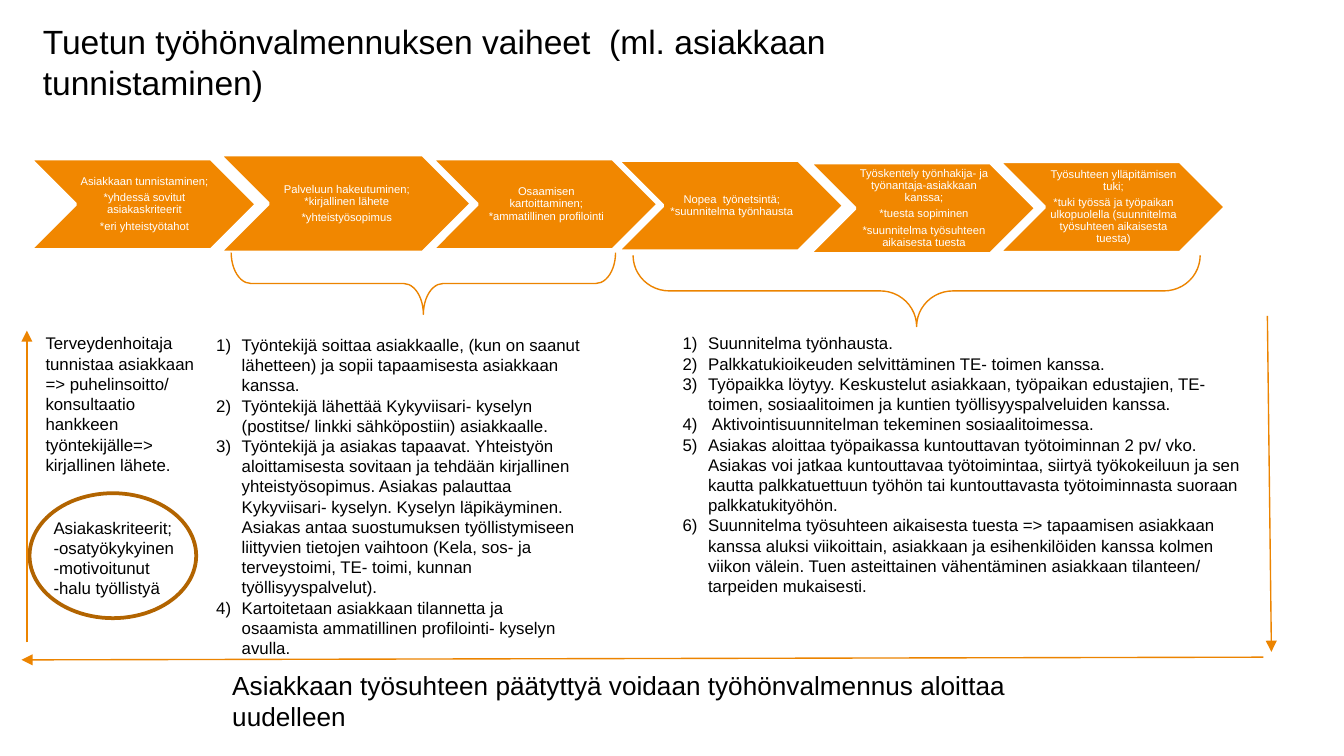
import pptx
import pptx.util
import pptx.dml.color
import pptx.enum.shapes
import pptx.enum.text
import pptx.oxml.ns
from lxml import etree

Inches, Pt = pptx.util.Inches, pptx.util.Pt
SHAPE = pptx.enum.shapes.MSO_SHAPE
TEXT = pptx.enum.text
qn = pptx.oxml.ns.qn

COLORS = {
    "phase": "F18700",
    "line": "EC8400",
    "ring": "B26400",
    "light": "FFFFFF",
    "text": "000000",
}

PHASES = [
    (0.22, 1.18, 1.69, 0.68, [
        "Asiakkaan tunnistaminen;",
        "*yhdessä sovitut asiakaskriteerit",
        "*eri yhteistyötahot"]),
    (1.63, 1.15, 1.88, 0.73, [
        "Palveluun hakeutuminen; *kirjallinen lähete",
        "*yhteistyösopimus"]),
    (3.21, 1.18, 1.69, 0.68, [
        "Osaamisen kartoittaminen; *ammatillinen profilointi"]),
    (4.59, 1.19, 1.69, 0.68, [
        "Nopea  työnetsintä; *suunnitelma työnhausta"]),
    (6.02, 1.21, 1.69, 0.68, [
        "Työskentely työnhakija- ja työnantaja-asiakkaan kanssa;",
        "*tuesta sopiminen",
        "*suunnitelma työsuhteen aikaisesta tuesta"]),
    (7.43, 1.2, 1.69, 0.68, [
        "Työsuhteen ylläpitämisen tuki;",
        "*tuki työssä ja työpaikan ulkopuolella (suunnitelma työsuhteen aikaisesta tuesta)"]),
]

REFERRAL = ["Terveydenhoitaja tunnistaa asiakkaan => puhelinsoitto/ konsultaatio "
            "hankkeen työntekijälle=> kirjallinen lähete."]

CRITERIA = ["Asiakaskriteerit;", "-osatyökykyinen", "-motivoitunut", "-halu työllistyä"]

INTAKE_STEPS = [
    "Työntekijä soittaa asiakkaalle, (kun on saanut lähetteen) ja sopii "
    "tapaamisesta asiakkaan kanssa.",
    "Työntekijä lähettää Kykyviisari- kyselyn (postitse/ linkki sähköpostiin) asiakkaalle.",
    "Työntekijä ja asiakas tapaavat. Yhteistyön aloittamisesta sovitaan ja tehdään "
    "kirjallinen yhteistyösopimus. Asiakas palauttaa Kykyviisari- kyselyn. Kyselyn "
    "läpikäyminen. Asiakas antaa suostumuksen työllistymiseen liittyvien tietojen "
    "vaihtoon (Kela, sos- ja terveystoimi, TE- toimi, kunnan työllisyyspalvelut).",
    "Kartoitetaan asiakkaan tilannetta ja osaamista ammatillinen profilointi- kyselyn avulla.",
]

WORK_STEPS = [
    "Suunnitelma työnhausta.",
    "Palkkatukioikeuden selvittäminen TE- toimen kanssa.",
    "Työpaikka löytyy. Keskustelut asiakkaan, työpaikan edustajien, TE- toimen, "
    "sosiaalitoimen ja kuntien työllisyyspalveluiden kanssa.",
    " Aktivointisuunnitelman tekeminen sosiaalitoimessa.",
    "Asiakas aloittaa työpaikassa kuntouttavan työtoiminnan 2 pv/ vko.  Asiakas voi "
    "jatkaa kuntouttavaa työtoimintaa, siirtyä työkokeiluun ja sen kautta "
    "palkkatuettuun työhön tai kuntouttavasta työtoiminnasta suoraan palkkatukityöhön.",
    "Suunnitelma työsuhteen aikaisesta tuesta => tapaamisen asiakkaan kanssa aluksi "
    "viikoittain, asiakkaan ja esihenkilöiden kanssa kolmen viikon välein. Tuen "
    "asteittainen vähentäminen asiakkaan tilanteen/ tarpeiden mukaisesti.",
]


def rgb(name):
    return pptx.dml.color.RGBColor.from_string(COLORS[name])


def number(p, indent=0.19):
    pPr = p._p.get_or_add_pPr()
    pPr.set("marL", str(Inches(indent)))
    pPr.set("indent", str(-Inches(indent)))
    etree.SubElement(pPr, qn("a:buFont"), typeface="+mj-lt")
    etree.SubElement(pPr, qn("a:buAutoNum"), type="arabicParenR")


def add_text(s, x, y, w, h, texts, size=9, color="text", align=None, anchor=None,
             insets=None, spacing=None, after=None, numbered=False):
    tf = s.shapes.add_textbox(Inches(x), Inches(y), Inches(w), Inches(h)).text_frame
    tf.word_wrap = True
    tf.vertical_anchor = anchor
    if insets:
        tf.margin_left, tf.margin_top, tf.margin_right, tf.margin_bottom = map(Inches, insets)
    else:
        tf.auto_size = TEXT.MSO_AUTO_SIZE.SHAPE_TO_FIT_TEXT
    for i, text in enumerate(texts):
        p = tf.add_paragraph() if i else tf.paragraphs[0]
        p.alignment = align
        p.line_spacing = spacing
        p.space_after = after
        if numbered:
            number(p)
        r = p.add_run()
        r.text = text
        r.font.name = "Arial"
        r.font.size = Pt(size)
        r.font.color.rgb = rgb(color)


def add_shape(s, kind, x, y, w, h, line, width, fill=None):
    sp = s.shapes.add_shape(kind, Inches(x), Inches(y), Inches(w), Inches(h))
    sp.shadow.inherit = False
    if fill:
        sp.fill.solid()
        sp.fill.fore_color.rgb = rgb(fill)
    else:
        sp.fill.background()
    sp.line.color.rgb = rgb(line)
    sp.line.width = Pt(width)
    return sp


def add_phase(s, x, y, w, h, texts):
    add_shape(s, SHAPE.CHEVRON, x, y, w, h, "light", 2, fill="phase")
    add_text(s, x + h / 2, y, w - h, h, texts, size=6, color="light",
             align=TEXT.PP_ALIGN.CENTER, anchor=TEXT.MSO_ANCHOR.MIDDLE,
             insets=(0.03, 0.01, 0.01, 0.01), spacing=0.9, after=Pt(2.1))


def add_brace(s, x, y, w, h, curve):
    sp = add_shape(s, SHAPE.RIGHT_BRACE, x + (w - h) / 2, y + (h - w) / 2, h, w, "line", 0.75)
    sp.rotation = 90
    sp.adjustments[0] = curve
    sp.adjustments[1] = 0.5


def add_steps(s, x, y, w, h, texts):
    add_text(s, x, y, w, h, texts, numbered=True)


def add_client(s, x, y, w, h):
    add_text(s, x + 0.02, y, w - 0.03, 1.16, REFERRAL)
    add_text(s, x + 0.08, y + 1.37, w - 0.06, 0.82, CRITERIA)
    add_shape(s, SHAPE.OVAL, x, y + h - 0.93, 1.24, 0.93, "ring", 2)


def add_arrow(s, x1, y1, x2, y2):
    c = s.shapes.add_connector(pptx.enum.shapes.MSO_CONNECTOR.STRAIGHT,
                               Inches(x1), Inches(y1), Inches(x2), Inches(y2))
    c.line.color.rgb = rgb("line")
    c.line.width = Pt(0.75)
    spPr = c._element.spPr
    etree.SubElement(spPr.find(qn("a:ln")), qn("a:tailEnd"), type="triangle")
    etree.SubElement(spPr, qn("a:effectLst"))


def add_cycle(s, x, y, w, h):
    add_arrow(s, x + w - 0.03, y, x + w, y + 2.5)
    add_arrow(s, x + 0.04, y + 2.43, x + 0.04, y + 0.11)
    add_arrow(s, x + w - 0.06, y + h - 0.02, x, y + h)


def main():
    prs = pptx.Presentation()
    prs.slide_width = Inches(10)
    prs.slide_height = prs.slide_width * 9 // 16
    s = prs.slides.add_slide(prs.slide_layouts[6])
    for phase in PHASES:
        add_phase(s, *phase)
    add_text(s, 0.22, 0.11, 7.49, 0.71,
             ["Tuetun työhönvalmennuksen vaiheet  (ml. asiakkaan tunnistaminen)"], size=18)
    add_client(s, 0.22, 2.43, 1.38, 2.17)
    add_steps(s, 1.51, 2.44, 2.92, 2.52, INTAKE_STEPS)
    add_steps(s, 4.98, 2.43, 4.42, 2.07, WORK_STEPS)
    add_brace(s, 1.72, 1.88, 2.86, 0.46, 0.32)
    add_brace(s, 4.71, 1.9, 4.22, 0.53, 0.51)
    add_cycle(s, 0.16, 2.35, 9.3, 2.56)
    add_text(s, 1.63, 4.93, 6.23, 0.57,
             ["Asiakkaan työsuhteen päätyttyä voidaan työhönvalmennus aloittaa uudelleen"], size=14)
    prs.save("out.pptx")


if __name__ == "__main__":
    main()
